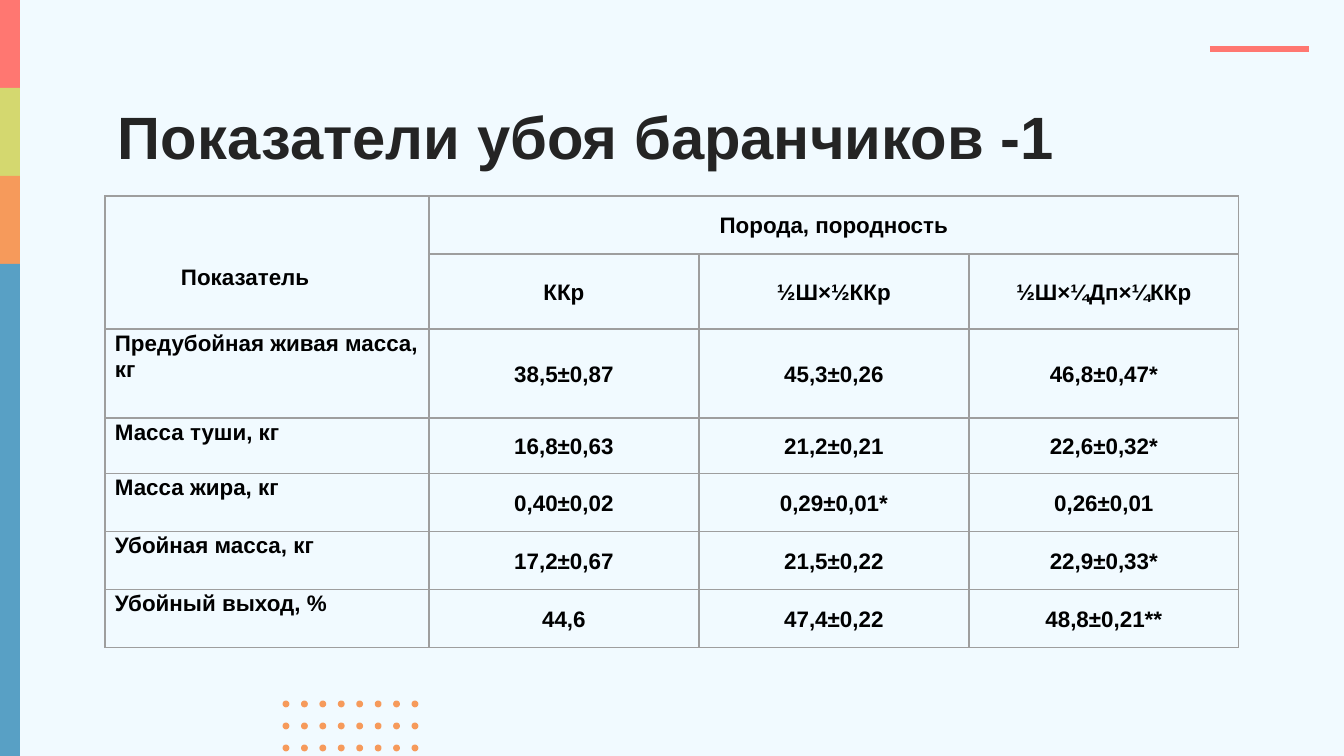
from dataclasses import dataclass

from lxml import etree
from pptx import Presentation
from pptx import util as u
from pptx.dml.color import RGBColor
from pptx.enum import shapes, text
from pptx.oxml.ns import qn

EMU_PER_PX = u.Inches(10) / 1344


@dataclass(frozen=True)
class Theme:
    background: str = "F1FAFF"
    coral: str = "FF7771"
    lime: str = "D4D86F"
    orange: str = "F69A5B"
    blue: str = "58A0C5"
    title: str = "242424"
    cell: str = "000000"
    border: str = "9E9E9E"
    font: str = "Arial"
    title_size: int = 32
    cell_size: int = 12


THEME = Theme()
TITLE = "Показатели убоя баранчиков -1"
COLUMN_WIDTHS = [324, 270, 270, 270]
ROW_HEIGHTS = [58, 75, 89, 56, 58, 58, 58]
ROWS = [
    ["Показатель", "Порода, породность", "", ""],
    ["", "ККр", "½Ш×½ККр", "½Ш×¼Дп×¼ККр"],
    ["Предубойная живая масса, кг", "38,5±0,87", "45,3±0,26", "46,8±0,47*"],
    ["Масса туши, кг", "16,8±0,63", "21,2±0,21", "22,6±0,32*"],
    ["Масса жира, кг", "0,40±0,02", "0,29±0,01*", "0,26±0,01"],
    ["Убойная масса, кг", "17,2±0,67", "21,5±0,22", "22,9±0,33*"],
    ["Убойный выход, %", "44,6", "47,4±0,22", "48,8±0,21**"],
]


def px(length):
    return u.Emu(round(length * EMU_PER_PX))


def set_all(target, **values):
    for name, value in values.items():
        setattr(target, name, value)


def set_font(font, size, color):
    set_all(font, name=THEME.font, size=u.Pt(size), bold=True)
    font.color.rgb = RGBColor.from_string(color)


def add_filled(parent, kind, bounds, color, line_width=0):
    shape = parent.shapes.add_shape(kind, *map(px, bounds))
    shape.shadow.inherit = False
    shape.fill.solid()
    shape.fill.fore_color.rgb = RGBColor.from_string(color)
    if line_width:
        shape.line.color.rgb = RGBColor.from_string(color)
        shape.line.width = u.Pt(line_width)
    else:
        shape.line.fill.background()


def add_side_stripes(page):
    group = page.shapes.add_group_shape()
    edges = [0, 88, 176, 264, 756]
    colors = [THEME.coral, THEME.lime, THEME.orange, THEME.blue]
    for top, bottom, color in zip(edges, edges[1:], colors):
        add_filled(group, shapes.MSO_SHAPE.RECTANGLE, (0, top, 20, bottom - top), color)


def add_accent_line(page):
    line = page.shapes.add_connector(
        shapes.MSO_CONNECTOR.STRAIGHT, *map(px, (1210, 49, 1309, 49)))
    line.line.color.rgb = RGBColor.from_string(THEME.coral)
    line.line.width = u.Pt(3)
    etree.SubElement(line._element.spPr, qn("a:effectLst"))


def add_dot_grid(page, columns=8, rows=3):
    group = page.shapes.add_group_shape()
    pitch = 129 / (columns - 1)
    for column in range(columns):
        for row in range(rows):
            bounds = (284 + column * pitch, 702 + row * 22, 4, 4)
            add_filled(group, shapes.MSO_SHAPE.OVAL, bounds, THEME.orange, 1.5)


def format_title(page):
    title = page.shapes.title
    set_all(title, left=px(105), top=px(79), width=px(1134), height=px(84))
    frame = title.text_frame
    set_all(frame, text=TITLE, word_wrap=True, auto_size=text.MSO_AUTO_SIZE.NONE,
            vertical_anchor=text.MSO_ANCHOR.TOP, margin_left=px(13),
            margin_right=px(13), margin_top=px(21), margin_bottom=px(13))
    para = frame.paragraphs[0]
    para.alignment = text.PP_ALIGN.LEFT
    set_font(para.runs[0].font, THEME.title_size, THEME.title)


def add_borders(cell):
    properties = cell._tc.get_or_add_tcPr()
    for index, side in enumerate(("lnL", "lnR", "lnT", "lnB")):
        line = etree.Element(qn(f"a:{side}"), w=str(u.Pt(0.75)))
        fill = etree.SubElement(line, qn("a:solidFill"))
        etree.SubElement(fill, qn("a:srgbClr"), val=THEME.border)
        properties.insert(index, line)


def format_cell(cell, content, centred, anchor):
    set_all(cell, text=content, margin_left=px(10), margin_right=px(10),
            margin_top=0, margin_bottom=0, vertical_anchor=anchor)
    cell.fill.background()
    add_borders(cell)
    para = cell.text_frame.paragraphs[0]
    para.alignment = text.PP_ALIGN.CENTER if centred else text.PP_ALIGN.LEFT
    para.line_spacing = 1.07
    set_font(para.font, THEME.cell_size, THEME.cell)
    for span in para.runs:
        set_font(span.font, THEME.cell_size, THEME.cell)


def add_slaughter_table(page):
    frame = page.shapes.add_table(
        len(ROWS), len(COLUMN_WIDTHS), px(105), px(196),
        px(sum(COLUMN_WIDTHS)), px(sum(ROW_HEIGHTS)))
    table = frame.table
    set_all(table, first_row=False, horz_banding=False)
    for column, width in zip(table.columns, COLUMN_WIDTHS):
        column.width = px(width)
    for row, height in zip(table.rows, ROW_HEIGHTS):
        row.height = px(height)
    for r, values in enumerate(ROWS):
        for c, content in enumerate(values):
            is_label = c == 0 and r > 1
            anchor = text.MSO_ANCHOR.TOP if is_label else text.MSO_ANCHOR.MIDDLE
            format_cell(table.cell(r, c), content, c > 0, anchor)
    corner = table.cell(0, 0)
    set_all(corner, margin_left=px(76), margin_top=px(28))
    corner.merge(table.cell(1, 0))
    table.cell(0, 1).merge(table.cell(0, 3))


def main():
    deck = Presentation()
    set_all(deck, slide_width=px(1344), slide_height=px(756))
    page = deck.slides.add_slide(deck.slide_layouts.get_by_name("Title Only"))
    page.background.fill.solid()
    page.background.fill.fore_color.rgb = RGBColor.from_string(THEME.background)
    add_side_stripes(page)
    add_accent_line(page)
    add_dot_grid(page)
    format_title(page)
    add_slaughter_table(page)
    deck.save("out.pptx")


if __name__ == "__main__":
    main()
